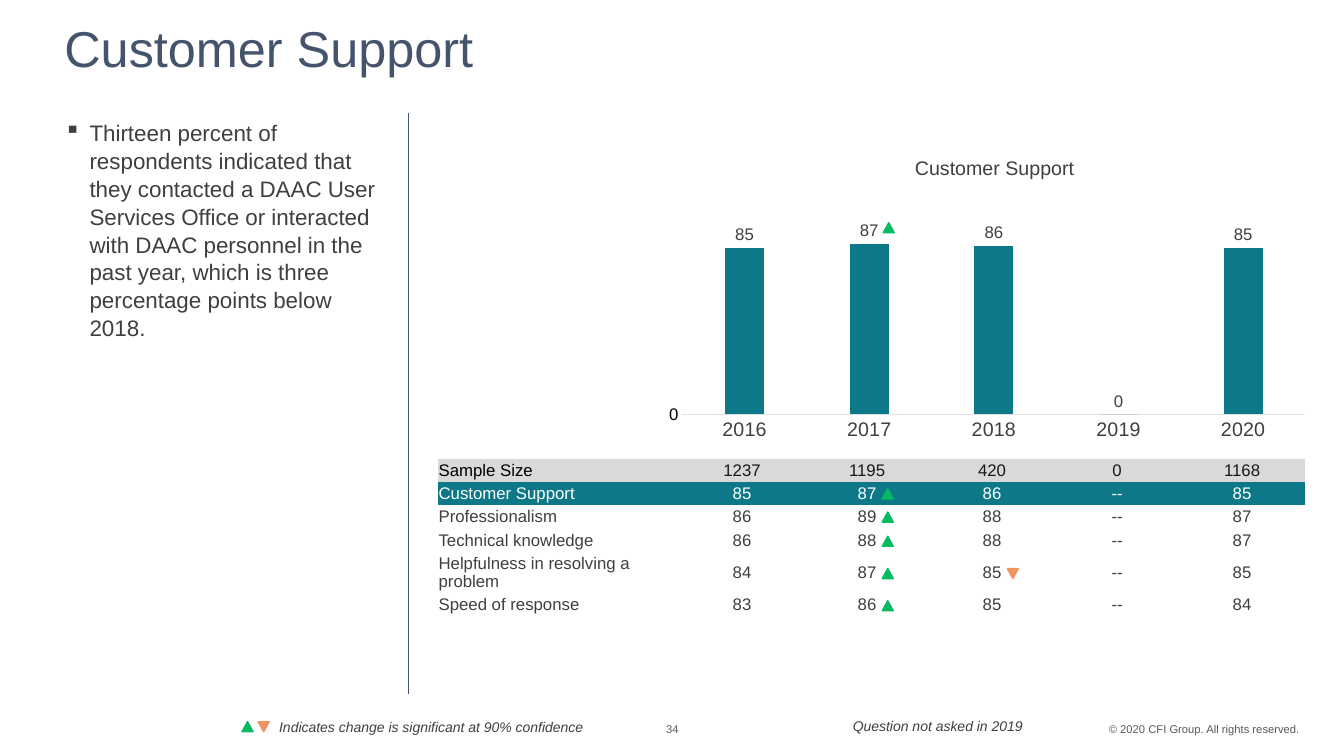
from dataclasses import dataclass

from lxml import etree
from pptx import Presentation
from pptx.chart.data import CategoryChartData
from pptx.dml.color import RGBColor
from pptx.enum.chart import XL_CHART_TYPE as ChartType, XL_LABEL_POSITION as LabelPosition
from pptx.enum.chart import XL_TICK_MARK as TickMark
from pptx.enum.shapes import MSO_CONNECTOR as Connector, MSO_SHAPE as Shape
from pptx.enum.text import MSO_ANCHOR as Anchor, PP_ALIGN as Align
from pptx.oxml import parse_xml
from pptx.oxml.ns import nsdecls, qn
from pptx.util import Inches, Pt

FONT = "Arial"
NAVY, TEAL, TEXT, GRAY = "45546D", "0D7988", "3F3F3F", "595959"
GREEN, ORANGE = "06BA63", "EF9562"
NO_STYLE = "{2D5ABB26-0587-4C30-8999-92F81FD0307C}"


@dataclass
class Label:
    text: str
    left: float
    top: float
    width: float
    height: float
    size: float
    color: str = TEXT
    align: Align = Align.LEFT
    italic: bool = False
    anchor: Anchor = Anchor.TOP
    spacing: float = 1.0


@dataclass
class Marker:
    left: float
    top: float
    rising: bool = True


@dataclass
class ScoreRow:
    values: list[str]
    label_color: str = TEXT
    value_color: str = TEXT
    fill: str | None = None


YEARS = ["2016", "2017", "2018", "2019", "2020"]
BODY = ("Thirteen percent of respondents indicated that they contacted a DAAC User Services "
        "Office or interacted with DAAC personnel in the past year, which is three percentage "
        "points below 2018.")
BODY_LABEL = Label(BODY, 0.54, 1.12, 3.44, 5.77, 16, spacing=1.04)
LABELS = [
    Label("34", 6.28, 7.12, 0.78, 0.24, 8, GRAY, Align.CENTER),
    Label("© 2020 CFI Group. All rights reserved.", 9.95, 7.12, 3.04, 0.24, 8, GRAY, Align.RIGHT),
    Label("Customer Support", 0.54, 0, 12.33, 1.01, 36, NAVY, anchor=Anchor.MIDDLE, spacing=0.9),
    Label("Customer Support", 6.8, 1.5, 6.13, 0.34, 14, align=Align.CENTER),
    Label("Indicates change is significant at 90% confidence", 2.67, 7.08, 3.75, 0.27, 10,
          italic=True),
    Label("Question not asked in 2019", 6.49, 7.07, 3.75, 0.27, 10, align=Align.RIGHT,
          italic=True),
]
ROWS = [
    ScoreRow(["Sample Size", "1237", "1195", "420", "0", "1168"], "000000", "181818", "D9D9D9"),
    ScoreRow(["Customer Support", "85", "87", "86", "--", "85"], "FFFFFF", "FFFFFF", TEAL),
    ScoreRow(["Professionalism", "86", "89", "88", "--", "87"]),
    ScoreRow(["Technical knowledge", "86", "88", "88", "--", "87"]),
    ScoreRow(["Helpfulness in resolving a problem", "84", "87", "85", "--", "85"]),
    ScoreRow(["Speed of response", "83", "86", "85", "--", "84"]),
]
MARKERS = [
    Marker(2.4, 7.16), Marker(2.56, 7.16, rising=False),  # legend
    Marker(8.76, 2.21),  # chart
    *[Marker(8.75, top) for top in (4.85, 5.08, 5.32, 5.64, 5.96)],  # table
    Marker(9.99, 5.64, rising=False),
]


def rgb(color: str) -> RGBColor:
    return RGBColor.from_string(color)


def set_font(font, size: float, color: str, italic: bool = False) -> None:
    font.name, font.size, font.italic = FONT, Pt(size), italic
    font.color.rgb = rgb(color)


def add_label(slide, label: Label):
    box = slide.shapes.add_textbox(Inches(label.left), Inches(label.top),
                                   Inches(label.width), Inches(label.height))
    frame = box.text_frame
    frame.word_wrap = True
    frame.vertical_anchor = label.anchor
    paragraph = frame.paragraphs[0]
    paragraph.text = label.text
    paragraph.alignment = label.align
    paragraph.line_spacing = label.spacing
    set_font(paragraph.font, label.size, label.color, label.italic)
    return paragraph


def add_bulleted(slide, label: Label) -> None:
    properties = add_label(slide, label)._p.get_or_add_pPr()
    properties.set("marL", str(Inches(0.25)))
    properties.set("indent", str(Inches(-0.25)))
    default_run = properties.find(qn("a:defRPr"))
    bullet_color = parse_xml(f'<a:buClr {nsdecls("a")}><a:srgbClr val="{TEXT}"/></a:buClr>')
    bullet = parse_xml(f'<a:buChar {nsdecls("a")} char="▪"/>')
    for element in (bullet_color, bullet):
        default_run.addprevious(element)


def add_divider(slide) -> None:
    line = slide.shapes.add_connector(Connector.STRAIGHT, Inches(4.05), Inches(1.12),
                                      Inches(4.05), Inches(6.89))
    line.line.color.rgb = rgb(NAVY)
    line.line.width = Pt(0.5)
    etree.SubElement(line._element.spPr, qn("a:effectLst"))


def add_score_chart(slide) -> None:
    data = CategoryChartData()
    data.categories = YEARS
    data.add_series("Series 1", (85, 87, 86, 0, 85))
    chart = slide.shapes.add_chart(ChartType.COLUMN_CLUSTERED, Inches(4), Inches(0.98),
                                   Inches(9.51), Inches(4.03), data).chart
    chart.has_legend = chart.has_title = False
    set_font(chart.font, 12, TEXT)

    plot = chart.plots[0]
    plot.gap_width, plot.overlap, plot.vary_by_categories = 219, -27, False
    fill = plot.series[0].format.fill
    fill.solid()
    fill.fore_color.rgb = rgb(TEAL)
    plot.has_data_labels = True
    plot.data_labels.show_value = True
    plot.data_labels.position = LabelPosition.OUTSIDE_END
    set_font(plot.data_labels.font, 12, TEXT)

    years, scores = chart.category_axis, chart.value_axis
    for axis, size, color in ((years, 14, TEXT), (scores, 12, "000000")):
        axis.major_tick_mark = axis.minor_tick_mark = TickMark.NONE
        axis.has_major_gridlines = False
        set_font(axis.tick_labels.font, size, color)
    years.format.line.color.rgb = rgb("E2E2E2")
    years.format.line.width = Pt(0.75)
    scores.format.line.fill.background()
    scores.minimum_scale, scores.maximum_scale, scores.major_unit = 0, 100, 500

    # Fixed plot area, so the columns line up with the table
    area = chart._chartSpace.chart.plotArea
    for old_layout in area.findall(qn("c:layout")):
        area.remove(old_layout)
    settings = {"layoutTarget": "inner", "xMode": "edge", "yMode": "edge",
                "x": 0.291, "y": 0.295, "w": 0.65, "h": 0.482}
    items = "".join(f'<c:{name} val="{value}"/>' for name, value in settings.items())
    area.insert(0, parse_xml(f'<c:layout {nsdecls("c")}><c:manualLayout>{items}'
                             '</c:manualLayout></c:layout>'))


def add_score_table(slide) -> None:
    table = slide.shapes.add_table(len(ROWS), len(YEARS) + 1, Inches(4.34), Inches(4.55),
                                   Inches(8.6), Inches(1.58)).table
    table.first_row = table.horz_banding = False
    table._tbl.tblPr.find(qn("a:tableStyleId")).text = NO_STYLE
    for index, column in enumerate(table.columns):
        column.width = Inches(1.24 if index else 2.4)
    for row, score_row in zip(table.rows, ROWS):
        row.height = Inches(0.23)
        for index, (cell, value) in enumerate(zip(row.cells, score_row.values)):
            cell.margin_left = cell.margin_right = cell.margin_top = Inches(0.01)
            cell.margin_bottom = 0
            cell.vertical_anchor = Anchor.MIDDLE
            if score_row.fill:
                cell.fill.solid()
                cell.fill.fore_color.rgb = rgb(score_row.fill)
            else:
                cell.fill.background()
            paragraph = cell.text_frame.paragraphs[0]
            paragraph.text = value
            paragraph.alignment = Align.CENTER if index else Align.LEFT
            set_font(paragraph.font, 12,
                     score_row.value_color if index else score_row.label_color)


def add_marker(slide, marker: Marker) -> None:
    shape = slide.shapes.add_shape(Shape.ISOSCELES_TRIANGLE, Inches(marker.left),
                                   Inches(marker.top), Inches(0.11), Inches(0.1))
    color = rgb(GREEN if marker.rising else ORANGE)
    shape.rotation = 0 if marker.rising else 180
    shape.shadow.inherit = False
    shape.fill.solid()
    shape.fill.fore_color.rgb = color
    shape.line.color.rgb = color
    shape.line.width = Pt(1)


def main() -> None:
    presentation = Presentation()
    presentation.slide_width, presentation.slide_height = Inches(13.33), Inches(7.5)
    slide = presentation.slides.add_slide(presentation.slide_layouts[6])
    add_divider(slide)
    add_bulleted(slide, BODY_LABEL)
    add_score_chart(slide)
    add_score_table(slide)
    for label in LABELS:
        add_label(slide, label)
    for marker in MARKERS:
        add_marker(slide, marker)
    presentation.save("out.pptx")


if __name__ == "__main__":
    main()
